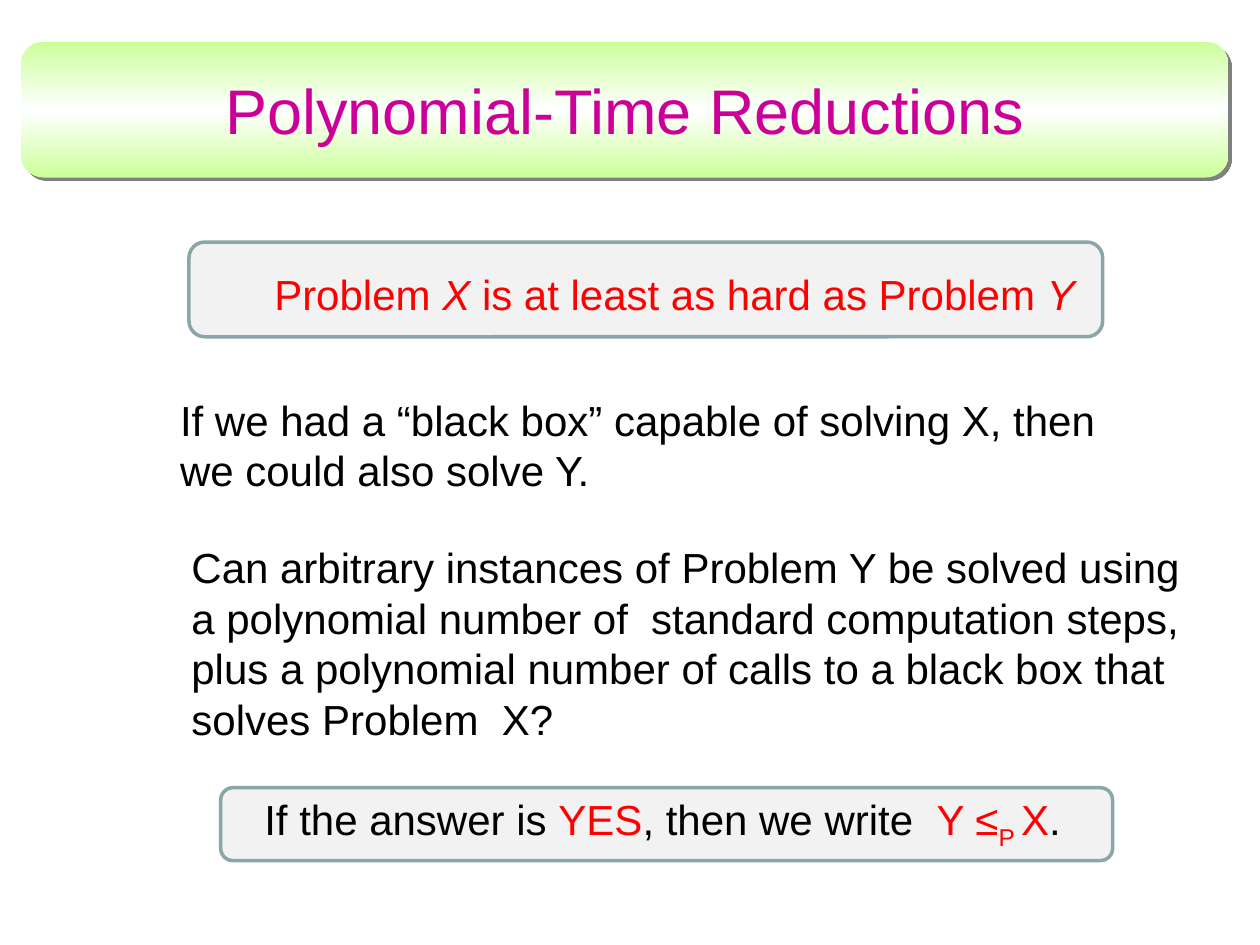
from copy import deepcopy

from lxml import etree
from pptx import Presentation
from pptx.dml.color import RGBColor
from pptx.enum.shapes import MSO_SHAPE
from pptx.enum.text import MSO_ANCHOR, MSO_AUTO_SIZE, PP_ALIGN
from pptx.oxml.ns import qn
from pptx.util import Cm, Pt

ROUNDED = MSO_SHAPE.ROUNDED_RECTANGLE
MIDDLE = MSO_ANCHOR.MIDDLE
CENTER = PP_ALIGN.CENTER
GROW = MSO_AUTO_SIZE.SHAPE_TO_FIT_TEXT
TITLE_ONLY = 5
FONT = "Arial"
BLACK, RED, MAGENTA = "000000", "FF0000", "CC0099"
GREEN, WHITE, PALE, BORDER, SHADOW = "CCFF99", "FFFFFF", "F2F2F2", "8AA6A8", "808080"


def color(value):
    return RGBColor.from_string(value)


def format_run(run, size, value, italic=False, baseline=None):
    run.font.name = FONT
    run.font.size = Pt(size)
    run.font.color.rgb = color(value)
    run.font.italic = italic
    if baseline:
        run.font._element.set("baseline", str(baseline))


def add_rounded(shapes, left, top, width, height):
    shape = shapes.add_shape(ROUNDED, Cm(left), Cm(top), Cm(width), Cm(height))
    shape.shadow.inherit = False
    return shape


def fill_gradient(shape, values):
    shape.fill.gradient()
    stop_list = shape._element.spPr.find(".//" + qn("a:gsLst"))
    stop_list.insert(1, deepcopy(stop_list[0]))
    stops = shape.fill.gradient_stops
    for index, (stop, value) in enumerate(zip(stops, values)):
        stop.position = index / (len(values) - 1)
        stop.color.rgb = color(value)
    shape.fill.gradient_angle = 90


def add_shadow(shape, value, distance):
    effects = shape._element.spPr.find(qn("a:effectLst"))
    shadow = etree.SubElement(effects, qn("a:outerShdw"), blurRad="0",
                              dist=str(Pt(distance)), dir="2700000",
                              algn="ctr", rotWithShape="0")
    etree.SubElement(shadow, qn("a:srgbClr"), val=value)


def add_banner(slide, left, top, width, height, text):
    banner = add_rounded(slide.shapes, left, top, width, height)
    fill_gradient(banner, [GREEN, WHITE, GREEN])
    banner.line.fill.background()
    add_shadow(banner, SHADOW, 2.8)

    title = slide.shapes.title
    banner._element.addnext(title._element)
    title.left, title.top = Cm(left), Cm(top + 0.2)
    title.width, title.height = Cm(width), Cm(height - 0.4)
    title.text_frame.text = text
    title.text_frame.vertical_anchor = MIDDLE
    paragraph = title.text_frame.paragraphs[0]
    paragraph.alignment = CENTER
    format_run(paragraph.runs[0], 36, MAGENTA)


def add_text(shapes, left, top, width, height, parts, wrap=True):
    box = shapes.add_textbox(Cm(left), Cm(top), Cm(width), Cm(height))
    box.text_frame.word_wrap = wrap
    box.text_frame.auto_size = GROW
    paragraph = box.text_frame.paragraphs[0]
    for text, *style in parts:
        run = paragraph.add_run()
        run.text = text
        format_run(run, 24, *style)


def add_callout(shapes, left, top, width, height, text_box, parts):
    panel = add_rounded(shapes, left, top, width, height)
    panel.fill.solid()
    panel.fill.fore_color.rgb = color(PALE)
    panel.line.color.rgb = color(BORDER)
    panel.line.width = Pt(2)
    shift, drop, text_width = text_box
    add_text(shapes, left + shift, top + drop, text_width, 1.27, parts, wrap=False)


def build_slide(presentation):
    slide = presentation.slides.add_slide(presentation.slide_layouts[TITLE_ONLY])
    shapes = slide.shapes
    add_banner(slide, 0.43, 0.84, 24.33, 2.74, "Polynomial-Time Reductions")
    add_callout(shapes, 3.81, 4.88, 18.42, 1.91, (1.47, 0.4, 16.81), [
        ("Problem ", RED),
        ("X", RED, True),
        (" is at least as hard as Problem ", RED),
        ("Y", RED, True),
    ])
    add_text(shapes, 3.38, 7.82, 19.48, 2.31, [
        ("If we had a “black box” capable of solving X, then "
         "we could also solve Y.", BLACK),
    ])
    add_text(shapes, 3.61, 10.8, 20.96, 4.37, [
        ("Can arbitrary instances of Problem Y be solved using "
         "a polynomial number of  standard computation steps, "
         "plus a polynomial number of calls to a black box that "
         "solves Problem  X?", BLACK),
    ])
    add_callout(shapes, 4.45, 15.88, 17.98, 1.47, (0.63, 0, 16.64), [
        ("If the answer is ", BLACK),
        ("YES", RED),
        (", then we write  ", BLACK),
        ("Y ≤", RED),
        ("P ", RED, False, -25000),
        ("X", RED),
        (".", BLACK),
    ])


def main():
    presentation = Presentation()
    presentation.slide_width, presentation.slide_height = Cm(25.4), Cm(19.05)
    build_slide(presentation)
    presentation.save("out.pptx")


if __name__ == "__main__":
    main()
